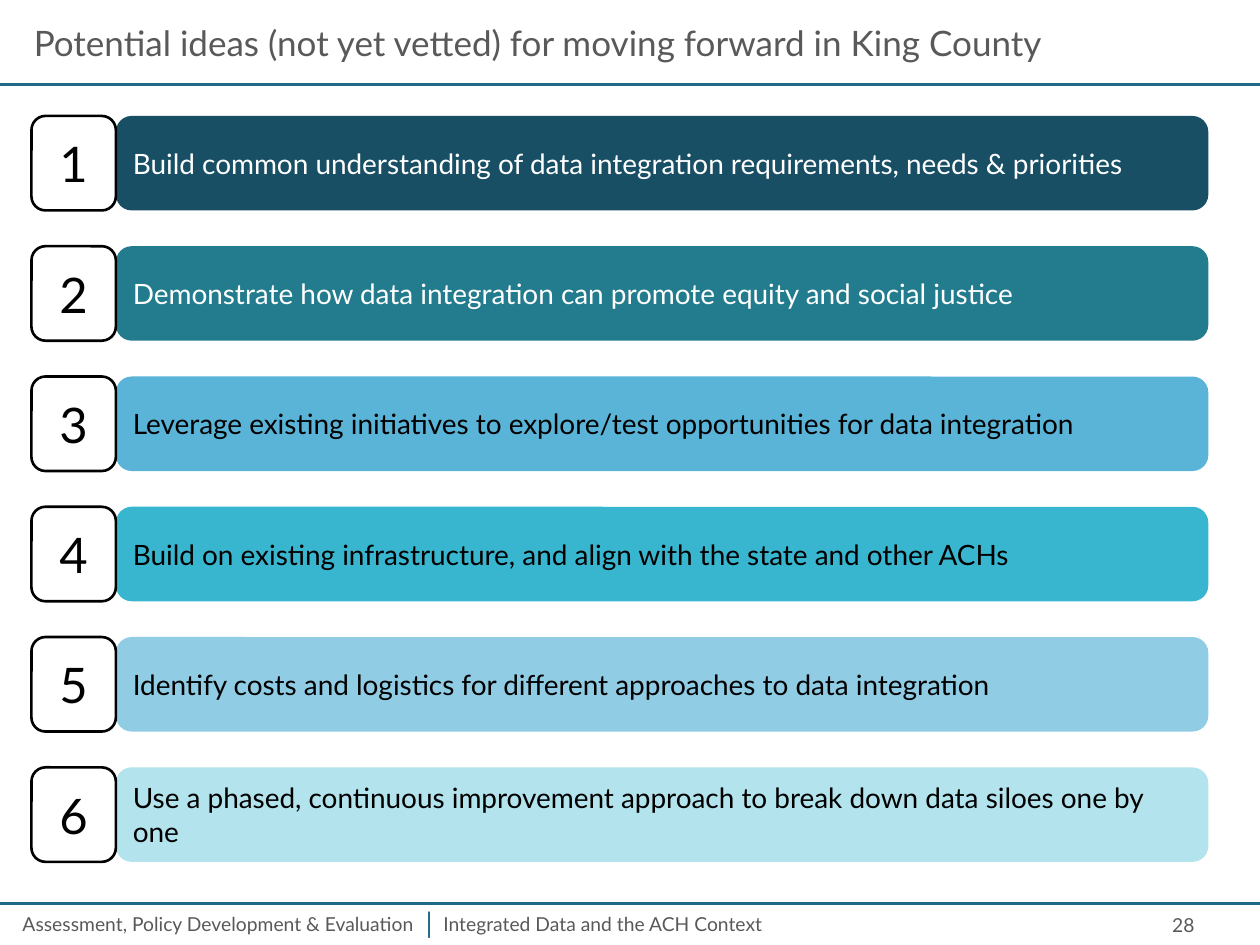
from lxml import etree
from pptx import Presentation
from pptx.dml.color import RGBColor
from pptx.enum.shapes import MSO_CONNECTOR, MSO_SHAPE
from pptx.enum.text import MSO_ANCHOR, PP_ALIGN
from pptx.oxml.ns import qn
from pptx.util import Inches, Pt

FONT = "Lato"
GREY, TEAL, BLACK, WHITE = "595959", "206A87", "000000", "FFFFFF"
SLIDE_WIDTH, SLIDE_HEIGHT = 10, 7.5

# Idea, bar colour, text colour
IDEAS = [
    ("Build common understanding of data integration requirements, needs & priorities", "184F65", WHITE),
    ("Demonstrate how data integration can promote equity and social justice", "237C8D", WHITE),
    ("Leverage existing initiatives to explore/test opportunities for data integration", "59B4D8", BLACK),
    ("Build on existing infrastructure, and align with the state and other ACHs", "39B6CF", BLACK),
    ("Identify costs and logistics for different approaches to data integration", "90CDE5", BLACK),
    ("Use a phased, continuous improvement approach to break down data siloes one by one", "B3E3EC", BLACK),
]


def rgb(value):
    return RGBColor.from_string(value)


def write(shape, text, size, color, align=PP_ALIGN.LEFT, anchor=MSO_ANCHOR.MIDDLE):
    frame = shape.text_frame
    frame.word_wrap = True
    frame.vertical_anchor = anchor
    paragraph = frame.paragraphs[0]
    paragraph.alignment = align
    run = paragraph.add_run()
    run.text = text
    run.font.name = FONT
    run.font.size = Pt(size)
    run.font.color.rgb = rgb(color)


def add_label(slide, box, *text_style, **layout):
    label = slide.shapes.add_textbox(*map(Inches, box))
    write(label, *text_style, **layout)


def add_rule(slide, y):
    rule = slide.shapes.add_connector(
        MSO_CONNECTOR.STRAIGHT, 0, Inches(y), Inches(SLIDE_WIDTH), Inches(y))
    rule.line.color.rgb = rgb(TEAL)
    rule.line.width = Pt(1.5)
    etree.SubElement(rule._element.spPr, qn("a:effectLst"))


def add_tile(slide, box, fill, outline=None):
    tile = slide.shapes.add_shape(MSO_SHAPE.ROUNDED_RECTANGLE, *map(Inches, box))
    tile.shadow.inherit = False
    tile.fill.solid()
    tile.fill.fore_color.rgb = rgb(fill)
    if outline:
        tile.line.color.rgb = rgb(outline)
        tile.line.width = Pt(1.5)
    else:
        tile.line.fill.background()
    return tile


def add_header(slide, box):
    left, top, width, height = box
    add_rule(slide, top + height)
    add_label(slide, (left + 0.17, top + 0.17, width - 0.33, 0.33),
              "Potential ideas (not yet vetted) for moving forward in King County", 20, GREY)


def add_ideas(slide, box):
    left, top, width, height = box
    row_height, number_width = 0.75, 0.67
    pitch = (height - row_height) / (len(IDEAS) - 1)
    for index, (idea, fill, color) in enumerate(IDEAS):
        y = top + index * pitch
        bar = add_tile(slide, (left + number_width, y, width - number_width, row_height), fill)
        write(bar, idea, 16, color)
        number = add_tile(slide, (left, y, number_width, row_height), WHITE, BLACK)
        write(number, str(index + 1), 28, BLACK, PP_ALIGN.CENTER)


def add_footer(slide, box):
    left, top, width, height = box
    text_top = top + 0.02
    add_rule(slide, top)
    add_label(slide, (left + 0.08, text_top, 3.58, 0.29),
              "Assessment, Policy Development & Evaluation", 11, GREY, anchor=MSO_ANCHOR.TOP)
    add_label(slide, (left + 3.42, text_top, 5.08, 0.29),
              "Integrated Data and the ACH Context", 11, GREY, anchor=MSO_ANCHOR.TOP)
    # Divider between the two footer texts
    add_label(slide, (left + 3.24, top - 0.03, 0.33, 0.37),
              "|", 16, TEAL, PP_ALIGN.CENTER, MSO_ANCHOR.TOP)
    # Slide number
    add_label(slide, (left + width - 2.75, text_top, 2.33, 0.3),
              "28", 11, GREY, PP_ALIGN.RIGHT)


def main():
    deck = Presentation()
    deck.slide_width = Inches(SLIDE_WIDTH)
    deck.slide_height = Inches(SLIDE_HEIGHT)
    slide = deck.slides.add_slide(deck.slide_layouts[6])
    add_footer(slide, (0, 7.17, SLIDE_WIDTH, 0.33))
    add_header(slide, (0, 0, SLIDE_WIDTH, 0.67))
    add_ideas(slide, (0.25, 0.92, 9.34, 5.92))
    deck.save("out.pptx")


if __name__ == "__main__":
    main()
